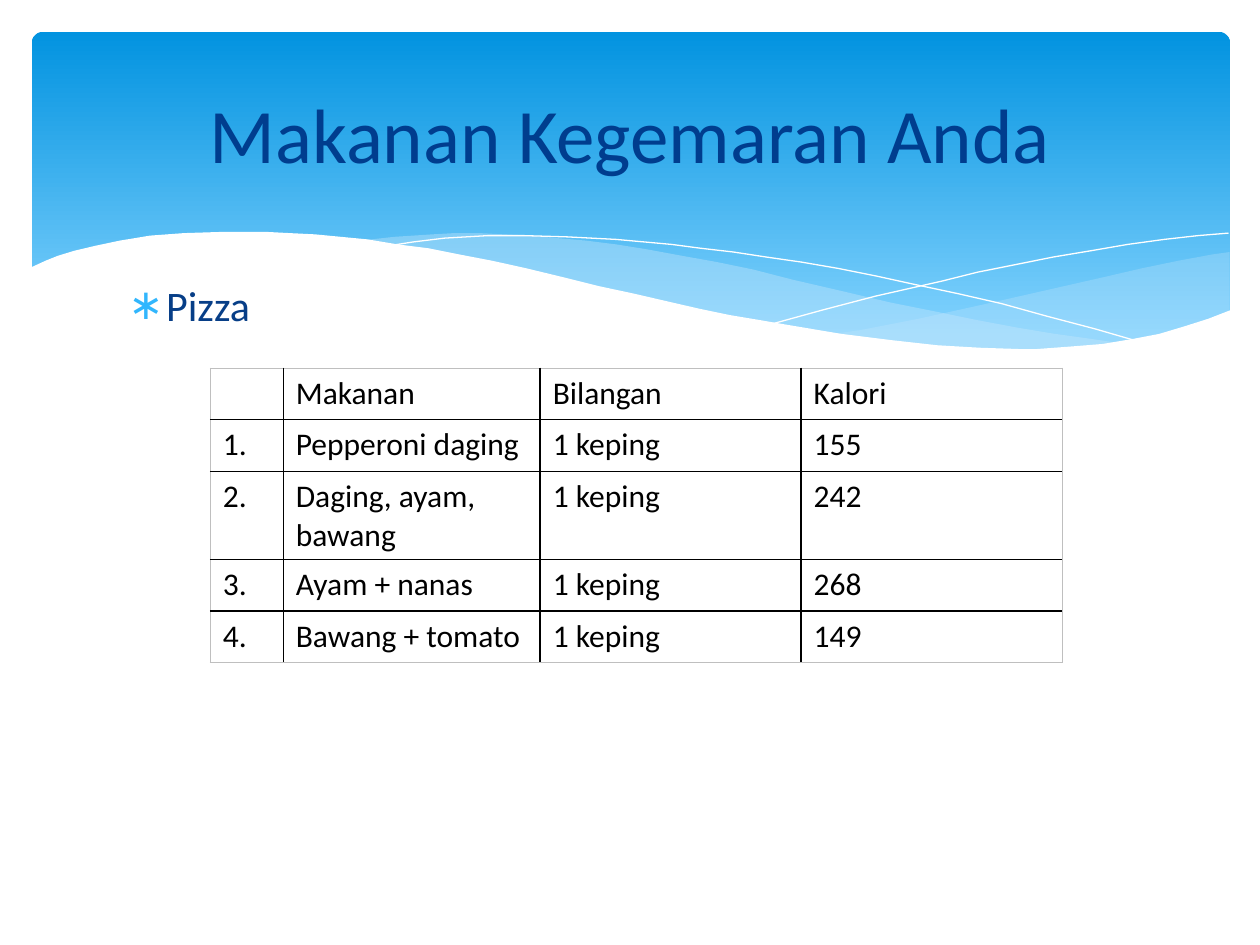
from dataclasses import dataclass

from lxml import etree
from pptx import Presentation
from pptx.dml.color import RGBColor
from pptx.enum.shapes import MSO_SHAPE
from pptx.enum.text import MSO_ANCHOR, PP_ALIGN
from pptx.oxml.ns import qn
from pptx.util import Cm, Pt

ROUNDED = MSO_SHAPE.ROUNDED_RECTANGLE
MIDDLE = MSO_ANCHOR.MIDDLE
CENTER = PP_ALIGN.CENTER
TITLE_ONLY = 5
INCH = Cm(2.54)


@dataclass(frozen=True)
class Theme:
    font: str = "Calibri"
    title: str = "003D8E"
    body: str = "073E87"
    bullet: str = "31B6FD"
    cell: str = "000000"
    frame: str = "BFBFBF"
    banner_top: str = "0293E0"
    banner_bottom: str = "83D3FE"
    wave: str = "C6E7FC"
    paper: str = "FFFFFF"
    title_size: int = 44
    body_size: int = 24
    cell_size: int = 18


THEME = Theme()


def style_font(font, size, color):
    for name, value in {"name": THEME.font, "size": Pt(size), "bold": False}.items():
        setattr(font, name, value)
    font.color.rgb = RGBColor.from_string(color)


def add_curve(points, fill=None, opacity=100):
    """Draw points in hundredths of an inch: a filled area, or a white hairline without fill."""
    builder = slide.shapes.build_freeform(*points[0], scale=INCH / 100)
    builder.add_line_segments(points[1:], close=fill is not None)
    curve = builder.convert_to_shape()
    curve.shadow.inherit = False
    if fill is None:
        curve.fill.background()
        curve.line.color.rgb = RGBColor.from_string(THEME.paper)
        curve.line.width = Pt(0)
        return
    curve.fill.solid()
    curve.fill.fore_color.rgb = RGBColor.from_string(fill)
    curve.line.fill.background()
    if opacity < 100:
        color = curve._element.spPr.find(qn("a:solidFill"))[0]
        etree.SubElement(color, qn("a:alpha"), val=str(opacity * 1000))


prs = Presentation()
prs.slide_width, prs.slide_height = Cm(25.4), Cm(19.05)
slide = prs.slides.add_slide(prs.slide_layouts[TITLE_ONLY])

# Banner
banner = slide.shapes.add_shape(ROUNDED, Cm(0.64), Cm(0.64), Cm(24.16), Cm(6.86))
banner.adjustments[0] = 0.034
banner.shadow.inherit = False
banner.line.fill.background()
banner.fill.gradient()
banner.fill.gradient_angle = 270
stops = [(0, THEME.banner_top), (0.9, THEME.banner_bottom)]
for stop, (position, color) in zip(banner.fill.gradient_stops, stops):
    stop.position = position
    stop.color.rgb = RGBColor.from_string(color)

# Waves along the lower edge of the banner
right_wave = [
    (976, 200), (962, 202), (935, 207), (906, 213), (876, 220), (832, 230), (779, 242),
    (729, 253), (683, 262), (661, 265), (691, 269), (719, 272), (745, 275), (769, 277),
    (803, 278), (835, 277), (863, 275), (889, 272), (913, 267), (935, 262), (949, 257),
    (963, 252), (976, 247)]
middle_wave = [
    (893, 273), (866, 269), (837, 265), (807, 260), (775, 254), (741, 247), (706, 240),
    (668, 231), (629, 222), (598, 214), (569, 208), (541, 203), (514, 198), (489, 194),
    (465, 191), (442, 189), (420, 187), (399, 186), (380, 185), (361, 185), (344, 186),
    (313, 188), (286, 191), (323, 196), (362, 203), (404, 211), (449, 222), (491, 232),
    (530, 240), (566, 248), (601, 255), (634, 261), (665, 266), (695, 270), (722, 274),
    (748, 276), (773, 277), (796, 278), (828, 278), (857, 277), (876, 275)]
falling_line = [
    (309, 195), (328, 192), (353, 189), (387, 187), (416, 187), (450, 188), (489, 190),
    (533, 194), (556, 197), (582, 200), (608, 204), (636, 208), (665, 213), (695, 219),
    (727, 226), (760, 233), (795, 241), (831, 251), (869, 261), (907, 272)]
rising_line = [
    (613, 257), (653, 246), (695, 235), (748, 223), (776, 216), (806, 210), (836, 204),
    (866, 199), (895, 194), (924, 190), (951, 187), (975, 185)]
paper_edge = [
    (977, 246), (959, 253), (940, 259), (920, 265), (899, 269), (875, 273), (850, 275),
    (823, 277), (809, 277), (778, 276), (744, 274), (708, 270), (668, 265), (626, 258),
    (603, 254), (579, 250), (555, 245), (529, 239), (503, 233), (475, 227), (447, 220),
    (418, 213), (391, 207), (365, 202), (340, 197), (316, 194), (292, 190), (271, 188),
    (250, 186), (230, 185), (211, 184), (177, 184), (146, 185), (119, 187), (95, 191),
    (76, 195), (59, 199), (46, 203), (36, 207), (23, 213), (23, 329), (977, 329)]

add_curve(right_wave, THEME.wave, 29)
add_curve(middle_wave, THEME.wave, 40)
add_curve(falling_line)
add_curve(rising_line)
add_curve(paper_edge, THEME.paper)

# Title, brought in front of the banner
title = slide.shapes.title
slide.shapes._spTree.append(title._element)
title_box = {"left": Cm(1.27), "top": Cm(0.94), "width": Cm(22.86), "height": Cm(3.48)}
for name, value in title_box.items():
    setattr(title, name, value)
title.text_frame.text = "Makanan Kegemaran Anda"
title.text_frame.vertical_anchor = MIDDLE
heading = title.text_frame.paragraphs[0]
heading.alignment = CENTER
style_font(heading.runs[0].font, THEME.title_size, THEME.title)

# Bulleted food name
food = slide.shapes.add_textbox(Cm(2.34), Cm(5.51), Cm(20.57), Cm(9.58))
food.text_frame.word_wrap = True
bullet_line = food.text_frame.paragraphs[0]
bullet_line.text = "Pizza"
bullet_line.space_before = Pt(4.8)
style_font(bullet_line.runs[0].font, THEME.body_size, THEME.body)
bullet_format = bullet_line._p.get_or_add_pPr()
bullet_format.set("marL", str(Cm(0.76)))
bullet_format.set("indent", str(-Cm(0.76)))
bullet_color = etree.SubElement(bullet_format, qn("a:buClr"))
etree.SubElement(bullet_color, qn("a:srgbClr"), val=THEME.bullet)
etree.SubElement(bullet_format, qn("a:buFont"), typeface=THEME.font)
etree.SubElement(bullet_format, qn("a:buChar"), char="∗")

# Calorie table
calories = [
    ("", "Makanan", "Bilangan", "Kalori"),
    ("1.", "Pepperoni daging", "1 keping", "155"),
    ("2.", "Daging, ayam, bawang", "1 keping", "242"),
    ("3.", "Ayam + nanas", "1 keping", "268"),
    ("4.", "Bawang + tomato", "1 keping", "149"),
]
column_widths = [Cm(1.47), Cm(5.18), Cm(5.26), Cm(5.26)]
row_heights = [Cm(1.04), Cm(1.04), Cm(1.78), Cm(1.04), Cm(1.04)]
last_row, last_column = len(row_heights) - 1, len(column_widths) - 1
table = slide.shapes.add_table(len(row_heights), len(column_widths), Cm(4.24), Cm(7.42),
                               sum(column_widths), sum(row_heights)).table
table.first_row = table.horz_banding = False
for column, width in zip(table.columns, column_widths):
    column.width = width
for row, height in zip(table.rows, row_heights):
    row.height = height

for r, entries in enumerate(calories):
    for c, entry in enumerate(entries):
        cell = table.cell(r, c)
        cell.text = entry
        style_font(cell.text_frame.paragraphs[0].font, THEME.cell_size, THEME.cell)
        for run in cell.text_frame.paragraphs[0].runs:
            style_font(run.font, THEME.cell_size, THEME.cell)
        outer_sides = {"a:lnL": c == 0, "a:lnR": c == last_column,
                       "a:lnT": r == 0, "a:lnB": r == last_row}
        cell_format = cell._tc.get_or_add_tcPr()
        for side, is_outer in outer_sides.items():
            width = Pt(0.5) if is_outer else Pt(1)
            border = etree.SubElement(cell_format, qn(side), w=str(width))
            border_fill = etree.SubElement(border, qn("a:solidFill"))
            etree.SubElement(border_fill, qn("a:srgbClr"),
                             val=THEME.frame if is_outer else THEME.cell)
        cell.fill.background()

prs.save("out.pptx")
